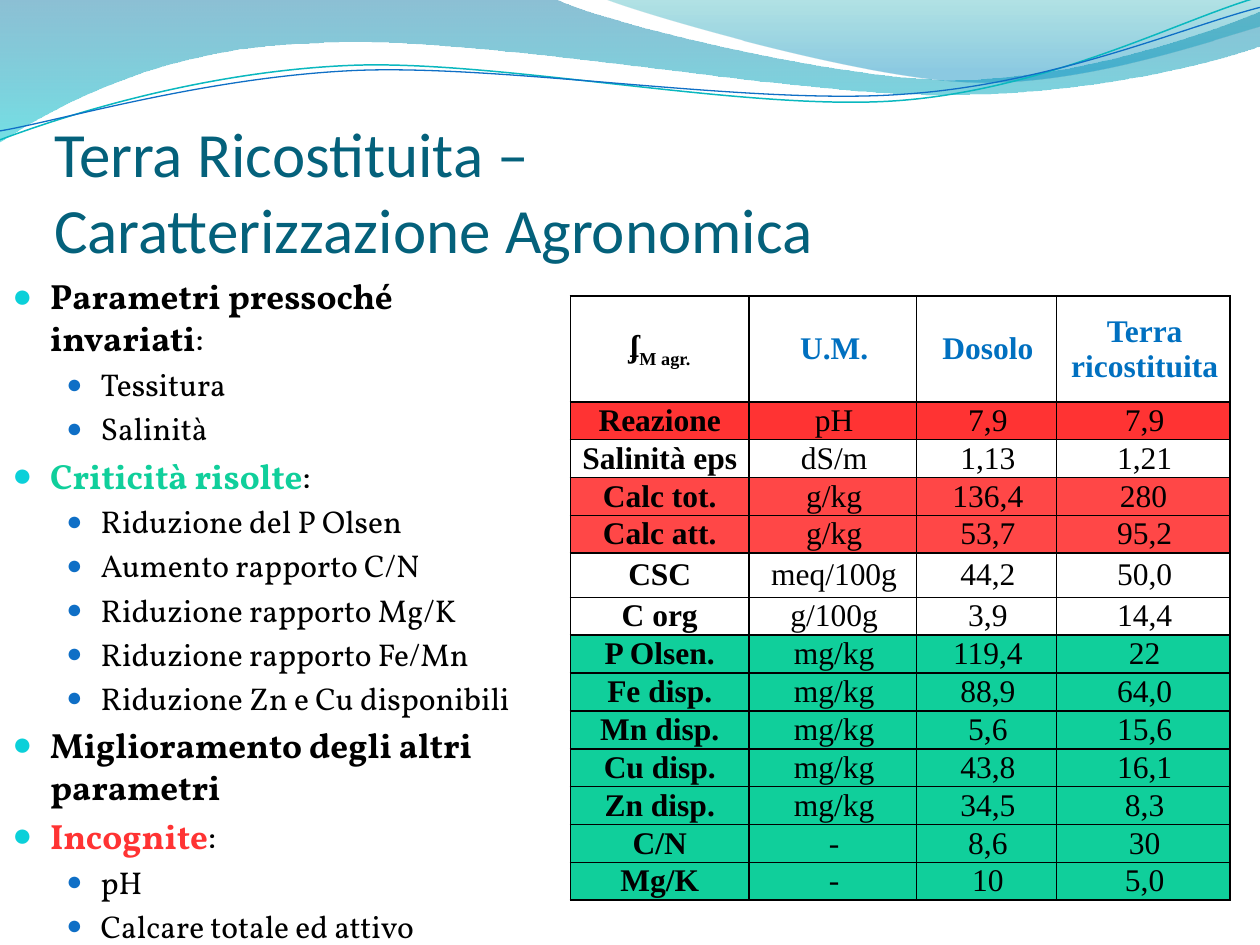
import dataclasses

import lxml.etree
import pptx
import pptx.dml.color
import pptx.enum.text
import pptx.oxml.ns
import pptx.util

Cm = pptx.util.Cm
Pt = pptx.util.Pt
qn = pptx.oxml.ns.qn
RGB = pptx.dml.color.RGBColor.from_string


@dataclasses.dataclass(frozen=True)
class Theme:
    title: str = "04617B"
    black: str = "000000"
    header: str = "0070C0"
    blue: str = "0F6FC6"
    teal: str = "0AB8BF"
    bullet: str = "0BD0D9"
    green: str = "10CF9B"
    red: str = "FF3333"
    light_red: str = "FF4747"
    title_size: float = 36
    body_size: float = 20
    detail_size: float = 18
    title_font: str = "Calibri"
    body_font: str = "Vollkorn"
    table_font: str = "Times New Roman"


theme = Theme()


def write(paragraph, text, *, font, size, color=theme.black, bold=False, baseline=0):
    run = paragraph.add_run()
    run.text = text
    run.font.name = font
    run.font.size = Pt(size)
    run.font.bold = bold
    run.font.color.rgb = RGB(color)
    if baseline:
        run._r.get_or_add_rPr().set("baseline", str(baseline * 1000))


def add_wave(start, segments, close):
    """Trace segments in cm: two numbers are a line, six a Bezier curve."""
    builder = slide.shapes.build_freeform(Cm(start[0]), Cm(start[1]))
    corners = [(Cm(x), Cm(y)) for part in segments for x, y in zip(part[::2], part[1::2])]
    builder.add_line_segments(corners, close=close)
    shape = builder.convert_to_shape()
    shape.shadow.inherit = False
    # Each curve takes the points of three line steps
    steps = iter(list(shape.element.iter(qn("a:lnTo"))))
    for part in segments:
        first = next(steps)
        if len(part) == 6:
            curve = lxml.etree.Element(qn("a:cubicBezTo"))
            first.addprevious(curve)
            for step in (first, next(steps), next(steps)):
                curve.append(step[0])
                step.getparent().remove(step)
    return shape


presentation = pptx.Presentation()
presentation.slide_width = Cm(25.4)
presentation.slide_height = Cm(19.05)
slide = presentation.slides.add_slide(presentation.slide_layouts[6])

# Gradient bands: start, segments, stops as (position, colour, opacity in percent)
bands = [
    ((0, 0),
     [(11.18, -0.03), (12.09, 0.43, 16.87, 1.6, 19.25, 1.6),
      (21.67, 1.6, 24.33, 0.66, 25.4, 0.23), (25.43, 0.91),
      (24.97, 1.12, 22.1, 1.93, 18.95, 1.91), (15.8, 1.91, 9.7, 0.71, 6.53, 0.86),
      (3.28, 0.91, 1.17, 2.11, -0.03, 2.87)],
     [(0, "0074A1", 45), (1, "00C6CF", 55)]),
    ((12.17, -0.03),
     [(12.93, 0.28, 17.32, 1.57, 19.53, 1.65), (21.74, 1.75, 24.41, 0.81, 25.4, 0.53),
      (25.4, 0)],
     [(0, "00A1A9", 30), (0.8, "008BBF", 45)]),
]
for start, segments, stops in bands:
    band = add_wave(start, segments, close=True)
    band.line.fill.background()
    band.fill.gradient()
    band.fill.gradient_angle = 270
    for gradient_stop, (position, color, _) in zip(band.fill.gradient_stops, stops):
        gradient_stop.position = position
        gradient_stop.color.rgb = RGB(color)
    for color_element, (_, _, opacity) in zip(band.element.iter(qn("a:srgbClr")), stops):
        lxml.etree.SubElement(color_element, qn("a:alpha")).set("val", str(opacity * 1000))

wave_lines = [
    ((0, 2.82),
     [(1.22, 2.36, 4.01, 1.45, 7.04, 1.32), (10.03, 1.19, 15.06, 2.26, 18.11, 2.03),
      (21.16, 1.8, 23.83, 0.38, 25.35, -0.05)], theme.teal, 0.85),
    ((0, 2.64),
     [(1.19, 2.44, 4.17, 1.55, 7.19, 1.42), (10.24, 1.3, 15.16, 2.13, 18.21, 1.9),
      (21.23, 1.7, 23.9, 0.53, 25.4, 0.15)], theme.blue, 0.75),
]
for start, segments, color, width in wave_lines:
    wave_line = add_wave(start, segments, close=False)
    wave_line.fill.background()
    wave_line.line.color.rgb = RGB(color)
    wave_line.line.width = Pt(width)

# Title
title = slide.shapes.add_textbox(Cm(1.09), Cm(2.13), Cm(22), Cm(3.23)).text_frame
title.word_wrap = True
title.vertical_anchor = pptx.enum.text.MSO_ANCHOR.BOTTOM
title.margin_left = title.margin_right = title.margin_bottom = 0
title_format = dict(font=theme.title_font, size=theme.title_size, color=theme.title)
write(title.paragraphs[0], "Terra Ricostituita –", **title_format)
title.paragraphs[0].add_line_break()
write(title.paragraphs[0], "Caratterizzazione Agronomica", **title_format)

# Bulleted list: heading, its colour, what follows it, details
topics = [
    ("Parametri pressoché invariati", theme.black, ":", ["Tessitura", "Salinità"]),
    ("Criticità risolte", theme.green, ":",
     ["Riduzione del P Olsen", "Aumento rapporto C/N", "Riduzione rapporto Mg/K",
      "Riduzione rapporto Fe/Mn", "Riduzione Zn e Cu disponibili"]),
    ("Miglioramento degli altri parametri", theme.black, "", []),
    ("Incognite", theme.red, ":", ["pH", "Calcare totale ed attivo"]),
]
body = slide.shapes.add_textbox(0, Cm(5.54), Cm(11.3), Cm(13.51)).text_frame
body.word_wrap = True
body.margin_top = 0
for heading, color, ending, details in topics:
    for level, text in [(0, heading)] + [(1, detail) for detail in details]:
        paragraph = body.paragraphs[0] if text == topics[0][0] else body.add_paragraph()
        paragraph.level = level
        size = (theme.body_size, theme.detail_size)[level]
        paragraph.space_before = Pt(size * 0.2)
        properties = paragraph._p.get_or_add_pPr()
        properties.set("marL", str(Cm((0.76, 1.78)[level])))
        properties.set("indent", str(-Cm((0.76, 0.69)[level])))
        bullet_color = lxml.etree.SubElement(properties, qn("a:buClr"))
        lxml.etree.SubElement(bullet_color, qn("a:srgbClr")).set("val", (theme.bullet, theme.blue)[level])
        lxml.etree.SubElement(properties, qn("a:buSzPct")).set("val", ("95000", "85000")[level])
        lxml.etree.SubElement(properties, qn("a:buFont")).set("typeface", theme.table_font)
        lxml.etree.SubElement(properties, qn("a:buChar")).set("char", "●")
        write(paragraph, text, font=theme.body_font, size=size, bold=level == 0,
              color=theme.black if level else color)
        if level == 0 and ending:
            write(paragraph, ending, font=theme.body_font, size=size)

# Table: row fill, then the four cells
rows = [
    (None, "ʄ", "U.M.", "Dosolo", "Terra ricostituita"),
    (theme.red, "Reazione", "pH", "7,9", "7,9"),
    (None, "Salinità eps", "dS/m", "1,13", "1,21"),
    (theme.light_red, "Calc tot.", "g/kg", "136,4", "280"),
    (theme.light_red, "Calc att.", "g/kg", "53,7", "95,2"),
    (None, "CSC", "meq/100g", "44,2", "50,0"),
    (None, "C org", "g/100g", "3,9", "14,4"),
    (theme.green, "P Olsen.", "mg/kg", "119,4", "22"),
    (theme.green, "Fe disp.", "mg/kg", "88,9", "64,0"),
    (theme.green, "Mn disp.", "mg/kg", "5,6", "15,6"),
    (theme.green, "Cu disp.", "mg/kg", "43,8", "16,1"),
    (theme.green, "Zn disp.", "mg/kg", "34,5", "8,3"),
    (theme.green, "C/N", "-", "8,6", "30"),
    (theme.green, "Mg/K", "-", "10", "5,0"),
]
special_heights = {"ʄ": 2.13, "CSC": 0.89}
table = slide.shapes.add_table(len(rows), 4, Cm(11.5), Cm(5.97), Cm(13.3), Cm(11.9)).table
table.first_row = table.horz_banding = False
for column, width in zip(table.columns, (3.6, 3.38, 2.82, 3.5)):
    column.width = Cm(width)
for row_index, (fill, *texts) in enumerate(rows):
    table.rows[row_index].height = Cm(special_heights.get(texts[0], 0.74))
    for column_index, text in enumerate(texts):
        cell = table.cell(row_index, column_index)
        cell.vertical_anchor = pptx.enum.text.MSO_ANCHOR.MIDDLE
        cell.margin_left = cell.margin_right = Cm(0.18)
        cell.margin_top = cell.margin_bottom = 0
        if fill:
            cell.fill.solid()
            cell.fill.fore_color.rgb = RGB(fill)
        else:
            cell.fill.background()
        cell_properties = cell._tc.get_or_add_tcPr()
        for side_index, side in enumerate(("a:lnL", "a:lnR", "a:lnT", "a:lnB")):
            border = lxml.etree.Element(qn(side), w=str(Pt(1)))
            border_fill = lxml.etree.SubElement(border, qn("a:solidFill"))
            lxml.etree.SubElement(border_fill, qn("a:srgbClr")).set("val", theme.black)
            cell_properties.insert(side_index, border)
        paragraph = cell.text_frame.paragraphs[0]
        paragraph.alignment = pptx.enum.text.PP_ALIGN.CENTER
        paragraph.space_before = paragraph.space_after = Pt(3)
        if column_index and text != "280":
            paragraph._p.get_or_add_pPr().set("marL", str(Cm(0.05)))
        is_header = row_index == 0
        write(paragraph, text, font=theme.table_font, size=theme.detail_size,
              bold=is_header or column_index == 0,
              color=theme.header if is_header and column_index else theme.black)
write(table.cell(0, 0).text_frame.paragraphs[0], "M agr.", font=theme.table_font,
      size=theme.detail_size, bold=True, baseline=-25)

presentation.save("out.pptx")
